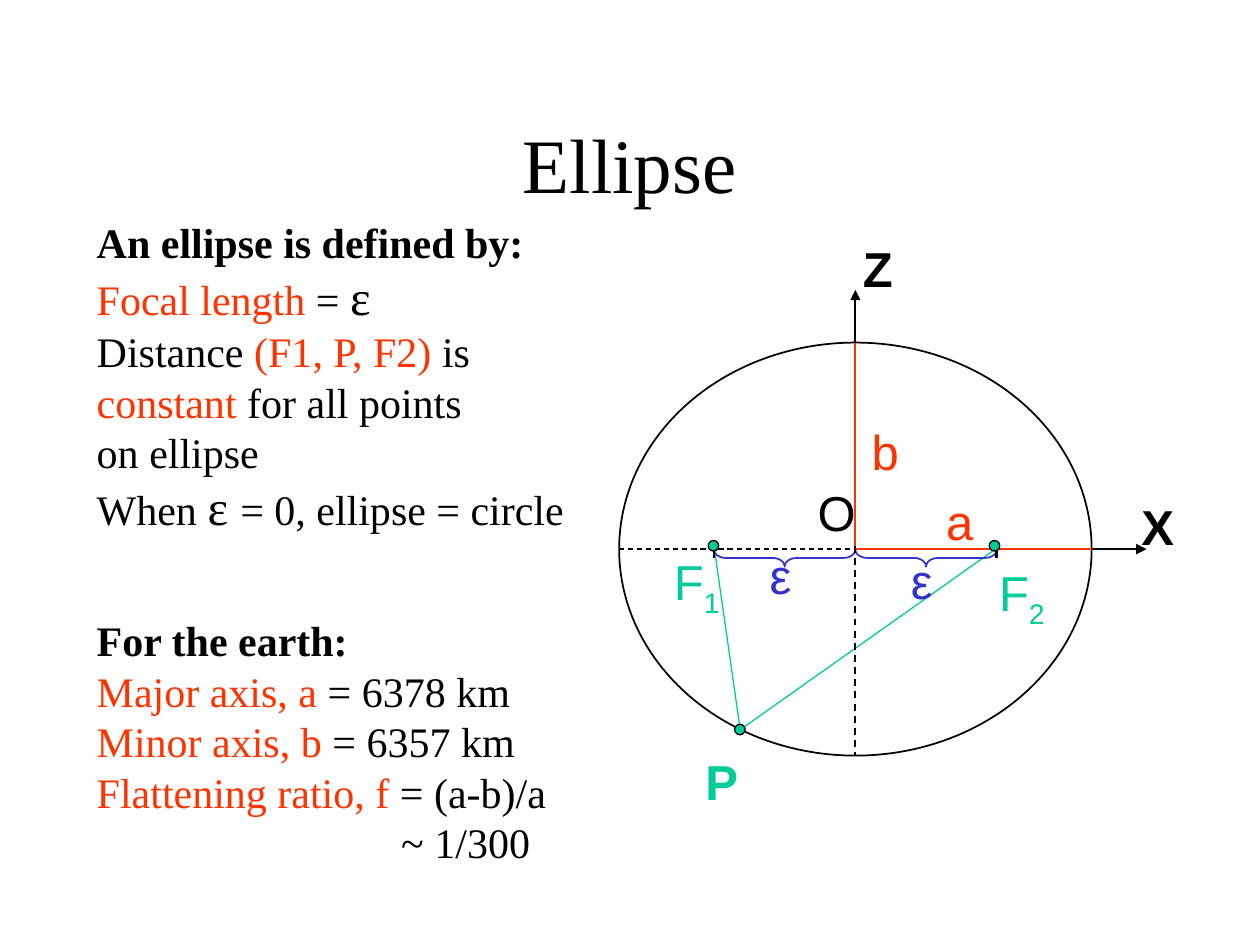
from lxml import etree
from pptx import Presentation
from pptx.dml.color import RGBColor
from pptx.enum import dml, shapes, text
from pptx.oxml import ns
from pptx.util import Pt

BLACK, RED, GREEN, BLUE = "000000", "FF3300", "00CC99", "3333CC"
SERIF, SANS = "Times New Roman", "Arial"


def color(value):
    return RGBColor.from_string(value)


class Figure:
    def __init__(self, slide):
        self.s = slide

    def stroke(self, line, value, width, dashed=False):
        line.color.rgb = color(value)
        line.width = Pt(width)
        if dashed:
            line.dash_style = dml.MSO_LINE.DASH

    def line(self, start, end, value=BLACK, width=1, dashed=False, arrow=False):
        points = [Pt(v) for v in (*start, *end)]
        c = self.s.shapes.add_connector(shapes.MSO_CONNECTOR.STRAIGHT, *points)
        self.stroke(c.line, value, width, dashed)
        if arrow:
            ln = c.line._get_or_add_ln()
            etree.SubElement(ln, ns.qn("a:tailEnd"), type="triangle")
        etree.SubElement(c._element.spPr, ns.qn("a:effectLst"))

    def shape(self, kind, center, size, value=BLACK, width=1, fill=None):
        (x, y), (w, h) = center, size
        sp = self.s.shapes.add_shape(kind, Pt(x - w / 2), Pt(y - h / 2), Pt(w), Pt(h))
        sp.shadow.inherit = False
        if fill:
            sp.fill.solid()
            sp.fill.fore_color.rgb = color(fill)
        else:
            sp.fill.background()
        self.stroke(sp.line, value, width)
        return sp

    def brace(self, center, length):
        sp = self.shape(shapes.MSO_SHAPE.LEFT_BRACE, center, (10, length), BLUE)
        sp.rotation = 270
        sp.adjustments[0] = 0.68

    def run(self, p, words, **style):
        r = p.add_run()
        r.text = words
        look = {"name": SERIF, "size": Pt(24), "bold": False, **style}
        r.font.color.rgb = color(look.pop("value", BLACK))
        baseline = look.pop("baseline", None)
        for key, val in look.items():
            setattr(r.font, key, val)
        if baseline:
            r._r.get_or_add_rPr().set("baseline", baseline)

    def title(self, words, box):
        sp = self.s.shapes.title
        sp.left, sp.top, sp.width, sp.height = map(Pt, box)
        tf = sp.text_frame
        tf.vertical_anchor = text.MSO_ANCHOR.MIDDLE
        p = tf.paragraphs[0]
        p.alignment = text.PP_ALIGN.CENTER
        self.run(p, words, size=Pt(44))

    def text(self, box, paragraphs, wrap=False):
        tf = self.s.shapes.add_textbox(*map(Pt, box)).text_frame
        tf.word_wrap = wrap
        tf.auto_size = text.MSO_AUTO_SIZE.SHAPE_TO_FIT_TEXT
        for i, runs in enumerate(paragraphs):
            p = tf.add_paragraph() if i else tf.paragraphs[0]
            for words, style in runs:
                self.run(p, words, **style)
        return tf

    def label(self, words, x, y, w, value=BLACK, bold=False, sub=None):
        style = {"name": SANS, "size": Pt(28), "value": value, "bold": bold}
        runs = [(words, style)]
        if sub:
            runs.append((sub, {**style, "baseline": "-25000"}))
        self.text((x, y, w, 41), [runs])


def main():
    prs = Presentation()
    prs.slide_width, prs.slide_height = Pt(720), Pt(540)
    fig = Figure(prs.slides.add_slide(prs.slide_layouts[5]))

    cx, cy, a, b = 488.8, 313.8, 135, 118
    f1, f2, point = (408, 312), (570, 313), (423, 417)
    center = (cx, cy)

    fig.title("Ellipse", (54, 48, 612, 90))
    fig.line(f1, point, GREEN, 0.75)
    fig.line(point, f2, GREEN, 0.75)
    fig.shape(shapes.MSO_SHAPE.OVAL, center, (2 * a, 2 * b))
    fig.line((cx - a, cy), center, width=0.75, dashed=True)
    fig.line((cx + a, cy), (655.2, cy), arrow=True)
    fig.line(center, (cx, 165.6), arrow=True)
    fig.line(center, (cx + a, cy), RED)
    fig.line((cx, cy - b), center, RED)

    for label in (
        ("P", 396, 426.2, 33, GREEN, True),
        ("F", 563.8, 318.2, 42.5, GREEN, False, "2"),
        ("O", 460.1, 272.2, 36),
        ("F", 378, 311.8, 42.5, GREEN, False, "1"),
        ("a", 533.5, 277.2, 30.2, RED),
        ("b", 491, 237.6, 30.2, RED),
        ("X", 645.1, 280.1, 33, BLACK, True),
        ("Z", 486, 132.5, 31.7, BLACK, True),
        ("ε", 432.7, 308.2, 26.6, BLUE),
        ("ε", 513.4, 311, 26.6, BLUE),
    ):
        fig.label(*label)

    for side in (-1, 1):
        fig.brace((cx + side * 40.4, 318.8), 81)
        x = cx + side * 80.7
        fig.line((x, 308.9), (x, 319), width=1.5)
    fig.line((cx, 311.8), (cx, cy + b), dashed=True)
    for dot in ((422.8, 416.9), (568.3, 311.9), (407.7, 311.9)):
        fig.shape(shapes.MSO_SHAPE.OVAL, dot, (6, 6), width=0.75, fill=GREEN)

    plain, red, bold, big = {}, {"value": RED}, {"bold": True}, {"size": Pt(28)}
    fig.text((48.2, 120.2, 281.5, 189.4), [
        [("An ellipse is defined by:", bold)],
        [("Focal length", red), (" = ", plain), ("ε", big)],
        [("Distance ", plain), ("(F1, P, F2)", red), (" is", plain)],
        [("constant", red), (" for all points", plain)],
        [("on ellipse", plain)],
        [("When ", plain), ("ε ", big), ("= 0, ellipse = circle", plain)],
    ], wrap=True)
    tf = fig.text((48.2, 347.8, 277.2, 180), [
        [("For the earth:", bold)],
        [("Major axis, a", red), (" = 6378 km", plain)],
        [("Minor axis, b", red), (" = 6357 km", plain)],
        [("Flattening ratio, f", red), (" = (a-b)/a", plain)],
        [("~ 1/300", plain)],
    ])
    tf.paragraphs[-1]._p.get_or_add_pPr().set("marL", str(Pt(174)))

    prs.save("out.pptx")


if __name__ == "__main__":
    main()
